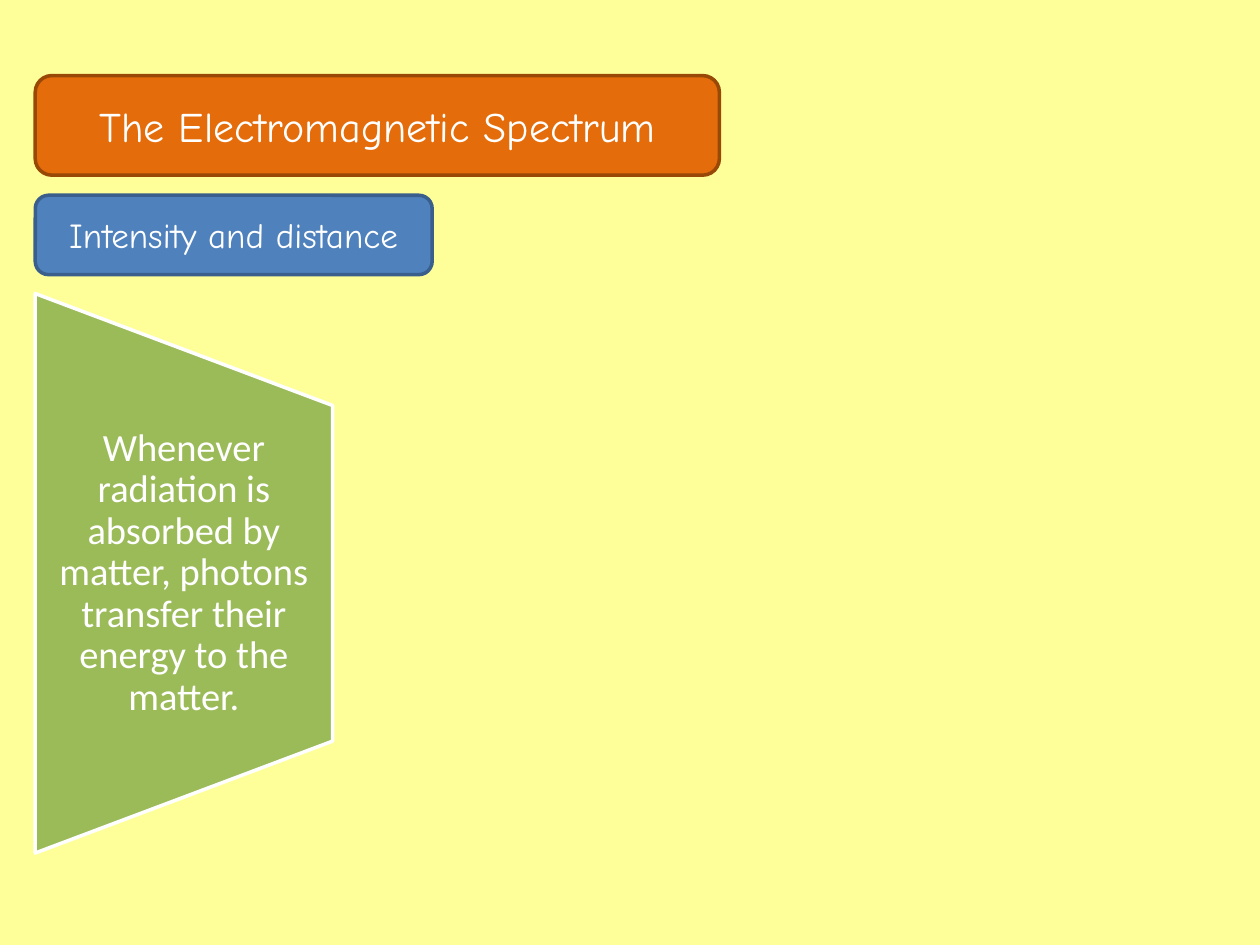
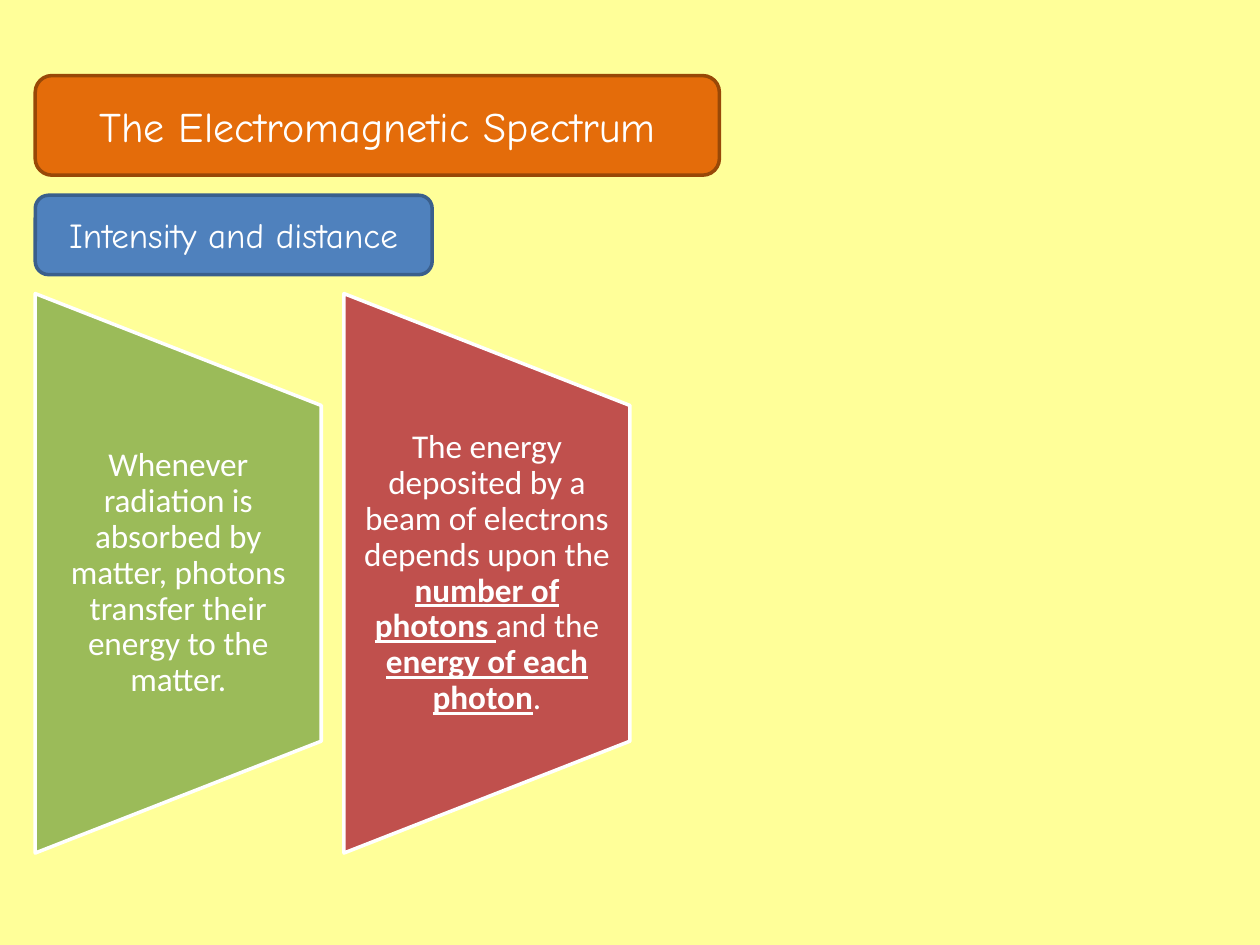
from pptx import Presentation
from pptx.dml.color import RGBColor
from pptx.enum.shapes import MSO_SHAPE
from pptx.enum.text import MSO_ANCHOR, PP_ALIGN
from pptx.util import Inches, Pt

WIDE, HIGH = 10, 7.5
LEFT = 0.28
TOP, TALL = 2.33, 4.44
GAP = 0.18
HEAD_FONT, BODY_FONT = "Comic Neue", "Calibri"
PAPER, WHITE = "FFFF99", "FFFFFF"
ORANGE, BROWN = "E46C0A", "984807"
BLUE, NAVY = "4F81BD", "3A5F8C"
GREEN, RED = "9BBB59", "C0504D"

# Each panel: fill colour and runs of (text, stressed)
MATTER = (GREEN, [("Whenever radiation is absorbed by matter, photons "
                   "transfer their energy to the matter.", False)])
ENERGY = (RED, [("The energy deposited by a beam of electrons depends upon the ", False),
                ("number of photons ", True),
                ("and the ", False),
                ("energy of each photon", True),
                (".", False)])


def color(code):
    return RGBColor.from_string(code)


def write(frame, runs, font, size, **format):
    """Fill a frame with one centred paragraph of (text, stressed) runs."""
    values = {"word_wrap": True, "vertical_anchor": MSO_ANCHOR.MIDDLE, **format}
    for name, value in values.items():
        setattr(frame, name, value)
    para = frame.paragraphs[0]
    para.alignment = PP_ALIGN.CENTER
    for text, stress in runs:
        run = para.add_run()
        run.text = text
        style = {"name": font, "size": Pt(size), "bold": stress, "underline": stress}
        for name, value in style.items():
            setattr(run.font, name, value)
        run.font.color.rgb = color(WHITE)
    return para


def block(slide, kind, box, fill, edge):
    shape = slide.shapes.add_shape(kind, *map(Inches, box))
    shape.shadow.inherit = False
    shape.fill.solid()
    shape.fill.fore_color.rgb = color(fill)
    shape.line.color.rgb = color(edge)
    shape.line.width = Pt(2)
    return shape


def label(slide, text, box, fill, edge, size):
    shape = block(slide, MSO_SHAPE.ROUNDED_RECTANGLE, box, fill, edge)
    write(shape.text_frame, [(text, False)], HEAD_FONT, size)


def panel(slide, left, width, inset, size, fill, runs):
    """Draw a sideways trapezoid with its text in the middle three fifths."""
    turned = (left + (width - TALL) / 2, TOP + (TALL - width) / 2, TALL, width)
    shape = block(slide, MSO_SHAPE.FLOWCHART_MANUAL_OPERATION, turned, fill, WHITE)
    shape.rotation = 270
    area = (left, TOP + TALL / 5, width, TALL * 3 / 5)
    frame = slide.shapes.add_textbox(*map(Inches, area)).text_frame
    side = Inches(inset)
    para = write(frame, runs, BODY_FONT, size, margin_left=side, margin_right=side,
                 margin_top=0, margin_bottom=0)
    para.line_spacing = 0.9


def page(deck, panels, width, inset, size):
    slide = deck.slides.add_slide(deck.slide_layouts[6])
    back = slide.background.fill
    back.solid()
    back.fore_color.rgb = color(PAPER)
    label(slide, "The Electromagnetic Spectrum", (LEFT, 0.6, 5.43, 0.79), ORANGE, BROWN, 24)
    label(slide, "Intensity and distance", (LEFT, 1.55, 3.15, 0.63), BLUE, NAVY, 20)
    for col, (fill, runs) in enumerate(panels):
        panel(slide, LEFT + col * (width + GAP), width, inset, size, fill, runs)


def main():
    deck = Presentation()
    deck.slide_width, deck.slide_height = Inches(WIDE), Inches(HIGH)
    page(deck, [MATTER], width=2.36, inset=0.15, size=22)
    page(deck, [MATTER, ENERGY], width=2.27, inset=0.13, size=19)
    deck.save("out.pptx")


if __name__ == "__main__":
    main()
